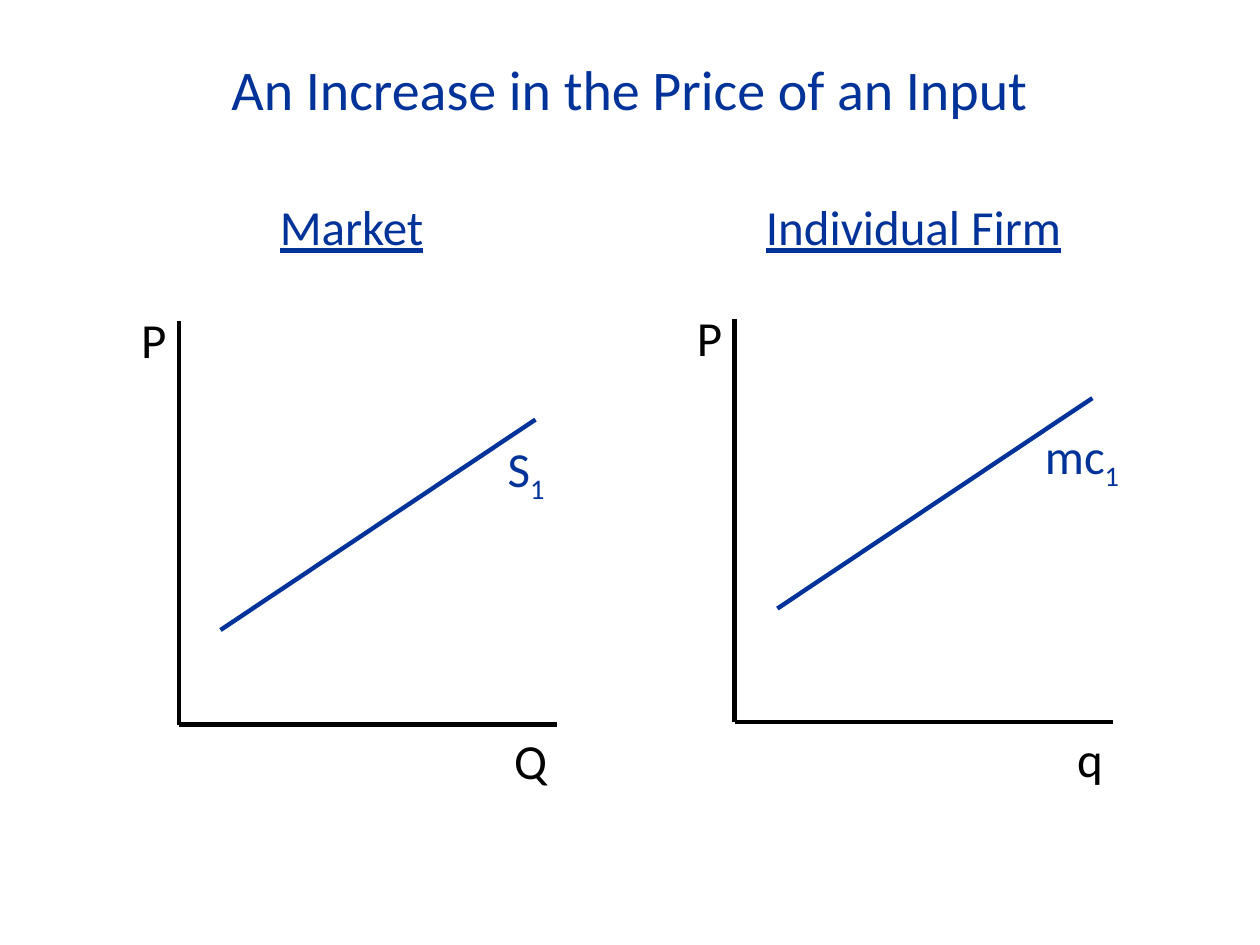
from lxml import etree
from pptx import Presentation
from pptx.dml.color import RGBColor
from pptx.enum import shapes, text
from pptx.oxml import ns
from pptx.util import Inches, Pt

BLUE = RGBColor(0x00, 0x33, 0x99)
BLACK = RGBColor(0x00, 0x00, 0x00)
FONT = "Calibri"
LABEL_HEIGHT = Inches(0.57)
AXIS_WIDTH = Inches(3)
AXIS_HEIGHT = Inches(3.2)
CURVE_RUN = Inches(2.5)
CURVE_RISE = Inches(1.67)


def style_paragraph(para, size, color, align):
    para.alignment = align
    para.font.name = FONT
    para.font.size = Pt(size)
    para.font.color.rgb = color


def add_title(page, wording):
    title = page.shapes.title
    title.left, title.top = Inches(0.7), Inches(0.38)
    title.width, title.height = Inches(8.6), Inches(0.64)
    title.text_frame.text = wording
    title.text_frame.vertical_anchor = text.MSO_ANCHOR.MIDDLE
    style_paragraph(title.text_frame.paragraphs[0], 32, BLUE, text.PP_ALIGN.CENTER)


def add_line(page, start, end, color):
    line = page.shapes.add_connector(shapes.MSO_CONNECTOR.STRAIGHT, *start, *end)
    line.line.color.rgb = color
    line.line.width = Pt(2.5)
    etree.SubElement(line.element.spPr, ns.qn("a:effectLst"))


def add_label(page, left, top, width, wording, color=BLACK,
              align=text.PP_ALIGN.RIGHT, subscript=None):
    box = page.shapes.add_textbox(left, top, width, LABEL_HEIGHT)
    box.text_frame.word_wrap = True
    para = box.text_frame.paragraphs[0]
    style_paragraph(para, 28, color, align)
    para.add_run().text = wording
    if subscript:
        span = para.add_run()
        span.text = subscript
        span.font._element.set("baseline", "-25000")
    return para


def add_axes(page, left, top, quantity):
    bottom = top + AXIS_HEIGHT
    add_line(page, (left, top), (left, bottom), BLACK)
    add_line(page, (left, bottom), (left + AXIS_WIDTH, bottom), BLACK)
    price_width = Inches(1.17)
    add_label(page, left - price_width, top - Inches(0.14), price_width, "P")
    add_label(page, left + Inches(2.04), bottom, Inches(0.98), quantity)


def add_curve(page, left, bottom, name, label_right, label_top):
    """Draw a rising curve and its label, placed from the curve's lower end."""
    add_line(page, (left, bottom), (left + CURVE_RUN, bottom - CURVE_RISE), BLUE)
    label_width = Inches(1.28)
    add_label(page, left + label_right - label_width, bottom - label_top,
              label_width, name, BLUE, subscript="1")


def add_heading(page, center, top, wording):
    width = Inches(3.92)
    para = add_label(page, center - width // 2, top, width, wording, BLUE,
                     text.PP_ALIGN.CENTER)
    para.runs[0].font.underline = True


def main():
    deck = Presentation()
    deck.slide_width, deck.slide_height = Inches(10), Inches(7.5)
    page = deck.slides.add_slide(deck.slide_layouts[5])
    add_title(page, "An Increase in the Price of an Input")

    heading_top = Inches(1.51)
    add_heading(page, Inches(2.79), heading_top, "Market")
    add_axes(page, Inches(1.42), Inches(2.55), "Q")
    add_curve(page, Inches(1.75), Inches(5), "S", Inches(2.67), Inches(1.57))

    add_heading(page, Inches(7.25), heading_top, "Individual Firm")
    add_axes(page, Inches(5.83), Inches(2.53), "q")
    add_curve(page, Inches(6.17), Inches(4.83), "mc", Inches(2.81), Inches(1.5))

    deck.save("out.pptx")


if __name__ == "__main__":
    main()
